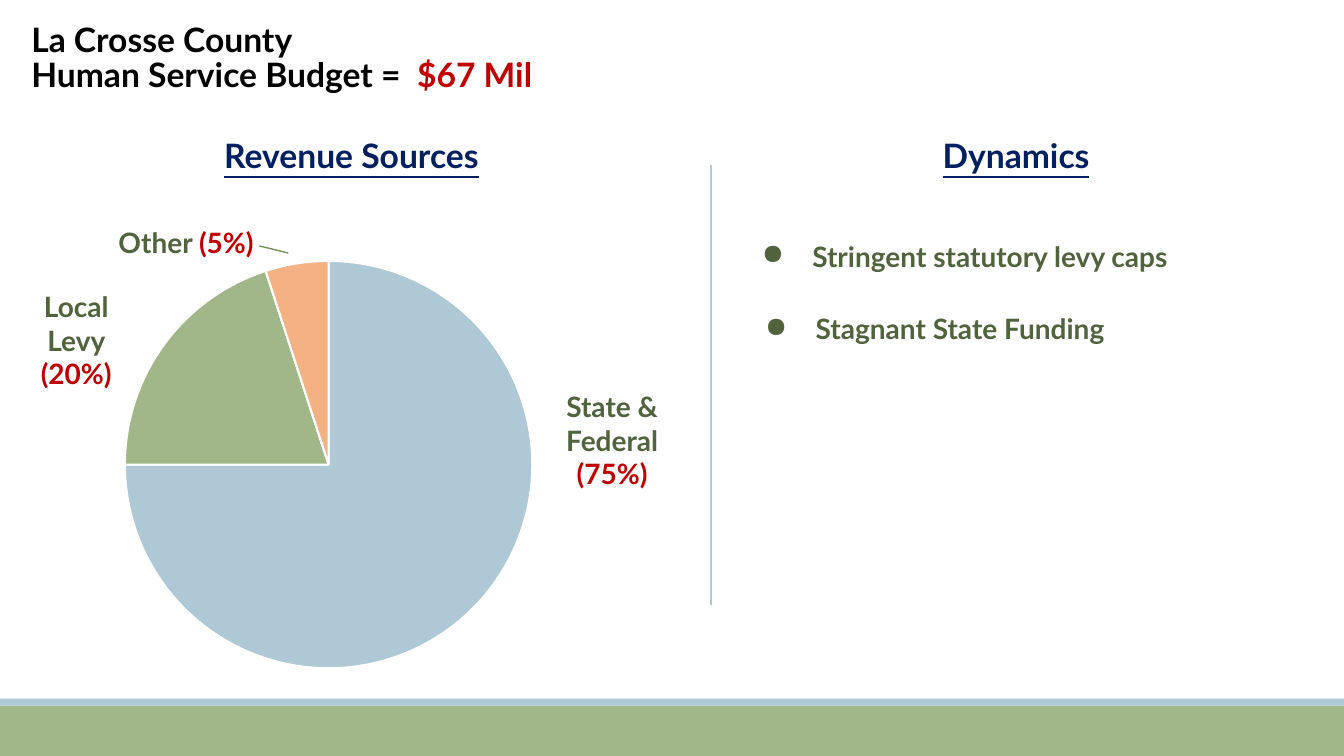
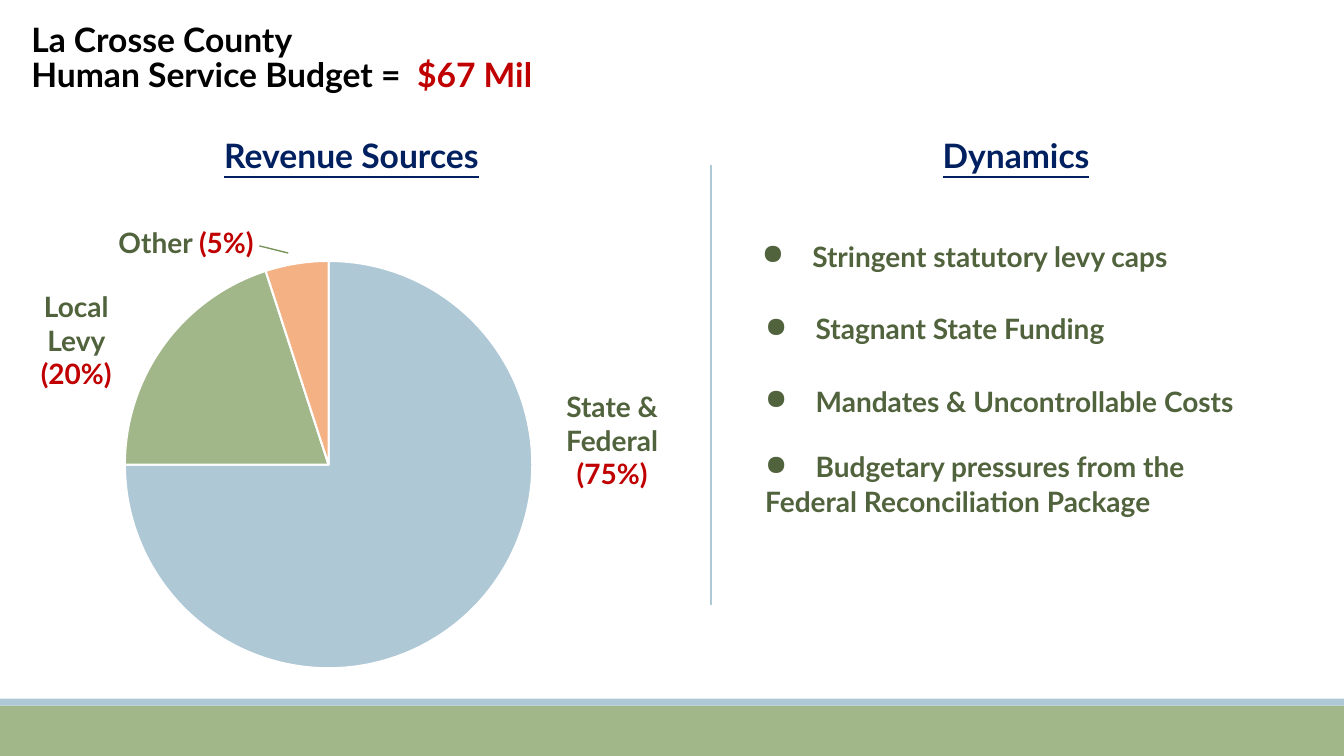
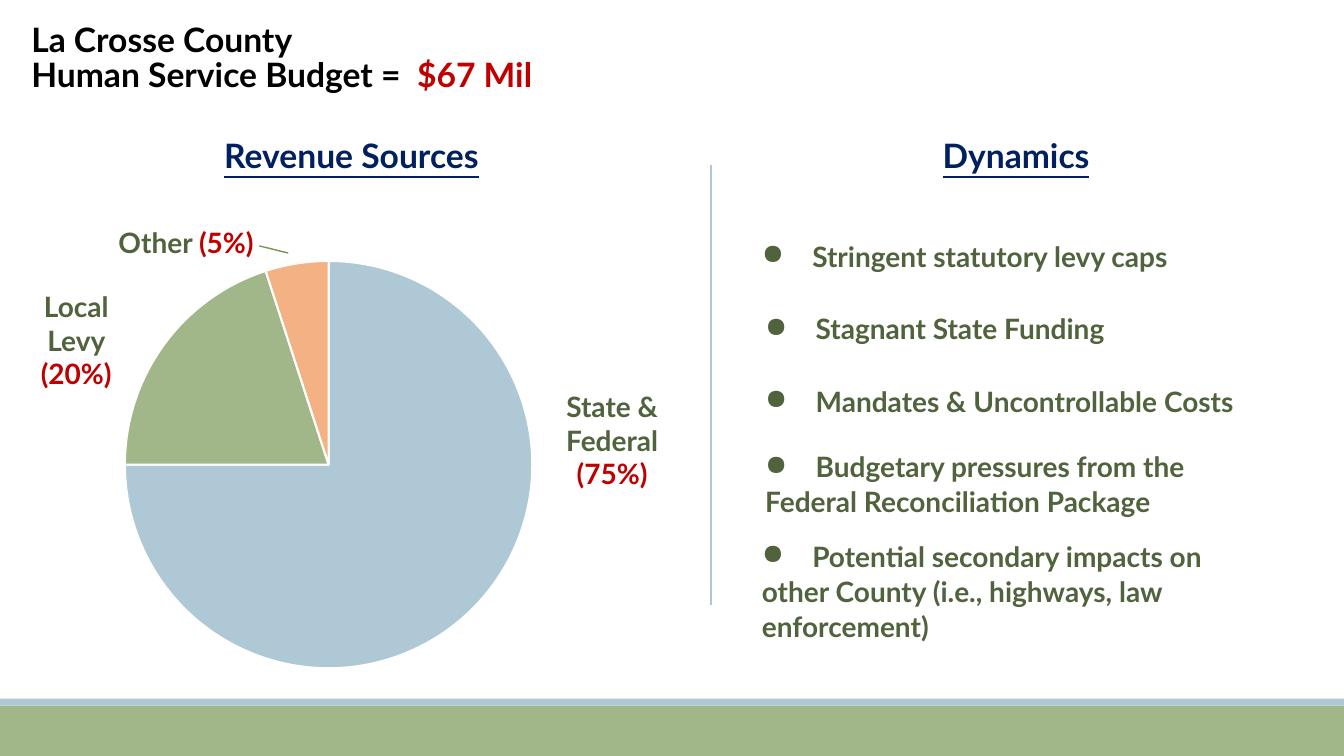
from dataclasses import dataclass

from lxml import etree
from pptx import Presentation
from pptx.chart.data import CategoryChartData
from pptx.dml.color import RGBColor
from pptx.enum.chart import XL_CHART_TYPE as ChartType
from pptx.enum.shapes import MSO_CONNECTOR as Connector, MSO_SHAPE as Preset
from pptx.enum.text import MSO_ANCHOR as Anchor, MSO_AUTO_SIZE as AutoSize, PP_ALIGN as Align
from pptx.oxml.ns import qn
from pptx.util import Inches, Pt


@dataclass(frozen=True)
class Theme:
    font: str = "Lato"
    black: str = "000000"
    white: str = "FFFFFF"
    red: str = "C00000"
    navy: str = "002060"
    olive: str = "51633D"
    green: str = "A1B78A"
    blue: str = "AEC8D5"
    orange: str = "F4B183"
    leader: str = "79955C"
    heading_size: int = 24
    body_size: int = 20
    chart_size: int = 10
    line_spacing: int = 20
    loose_spacing: int = 25


THEME = Theme()
WIDTH, HEIGHT = Inches(13.33), Inches(7.5)

# Grid of 100 columns by 100 rows; every position below is in these units
BANDS = [(93.33, 6.67, THEME.green), (92.4, 0.93, THEME.blue)]
LABEL_WIDTH, LABEL_HEIGHT = 8.5, 11.6
SLICES = [("1", 75, THEME.blue), ("2", 20, THEME.green), ("3", 5, THEME.orange)]
HEADINGS = [("Revenue Sources", 6.75), ("Dynamics", 56.2)]

# Slice labels: left, top, width, then lines made of (text, colour) pieces
LABELS = [
    (41.3, 51.6, LABEL_WIDTH,
     [[("State &", THEME.olive)], [("Federal", THEME.olive)], [("(75%)", THEME.red)]]),
    (1.43, 38.4, LABEL_WIDTH,
     [[("Local", THEME.olive)], [("Levy", THEME.olive)], [("(20%)", THEME.red)]]),
    (3.4, 29.87, 20.9, [[("Other ", THEME.olive), ("(5%)", THEME.red)]]),
]

# Dynamics: text, left, top, line spacing
DYNAMICS = [
    ("Stringent statutory levy caps", 55.95, 31.7, THEME.line_spacing),
    ("Stagnant State Funding", 56.2, 41.3, THEME.line_spacing),
    ("Mandates & Uncontrollable Costs", 56.2, 50, THEME.loose_spacing),
    ("Budgetary pressures from the Federal Reconciliation Package",
     56.2, 58.67, THEME.loose_spacing),
    ("Potential secondary impacts on other County (i.e., highways, law enforcement)",
     55.95, 70.5, THEME.loose_spacing),
]
DYNAMICS_PER_SLIDE = (2, 4, 5)


def columns(count):
    return int(WIDTH * count / 100)


def rows(count):
    return int(HEIGHT * count / 100)


def grid_box(left, top, width, height):
    return columns(left), rows(top), columns(width), rows(height)


def color(value):
    return RGBColor.from_string(value)


def add_tab_stop(paragraph, position, bullet=None):
    """Set a tab stop, after a bullet sign if one is given."""
    properties = paragraph._p.get_or_add_pPr()
    if bullet:
        properties.set("marL", "0")
        properties.set("indent", "0")
        etree.SubElement(properties, qn("a:buChar"), char=bullet)
    stops = etree.SubElement(properties, qn("a:tabLst"))
    etree.SubElement(stops, qn("a:tab"), pos=str(columns(position)), algn="l")


def write_lines(text_frame, lines, size, align, spacing=THEME.line_spacing, underline=None):
    """Fill a text frame with lines, each a list of (text, colour) pieces."""
    text_frame.word_wrap = True
    text_frame.auto_size = AutoSize.NONE
    text_frame.vertical_anchor = Anchor.TOP
    for index, pieces in enumerate(lines):
        paragraph = text_frame.add_paragraph() if index else text_frame.paragraphs[0]
        paragraph.alignment = align
        paragraph.line_spacing = Pt(spacing)
        paragraph.space_before = Pt(size / 5 if index else 0)
        for text, text_color in pieces:
            run = paragraph.add_run()
            run.text = text
            run.font.name = THEME.font
            run.font.size = Pt(size)
            run.font.bold = True
            run.font.underline = underline
            run.font.color.rgb = color(text_color)


def add_text(slide, box, lines, size, align=Align.CENTER, **style):
    text_frame = slide.shapes.add_textbox(*grid_box(*box)).text_frame
    write_lines(text_frame, lines, size, align, **style)
    return text_frame


def add_line(slide, start, end, line_color):
    line = slide.shapes.add_connector(
        Connector.STRAIGHT, columns(start[0]), rows(start[1]), columns(end[0]), rows(end[1]))
    line.line.color.rgb = color(line_color)
    line.line.width = Pt(1)
    etree.SubElement(line.element.spPr, qn("a:effectLst"))


def add_bands(slide):
    """Draw the footer bands and hand them to the layout that all slides share."""
    for top, height, fill in BANDS:
        band = slide.shapes.add_shape(Preset.RECTANGLE, *grid_box(0, top, 100, height))
        band.shadow.inherit = False
        band.fill.solid()
        band.fill.fore_color.rgb = color(fill)
        band.line.fill.background()
        slide.slide_layout.shapes.element.append(band.element)


def add_title(slide):
    title = slide.shapes.title
    title.left, title.top, title.width, title.height = grid_box(1.58, 3.47, 42.2, 11.6)
    lines = [[("La Crosse County", THEME.black)],
             [("Human Service Budget =\t", THEME.black), ("$67 Mil", THEME.red)]]
    write_lines(title.text_frame, lines, THEME.heading_size, Align.LEFT)
    add_tab_stop(title.text_frame.paragraphs[1], 28.7)


def add_revenue_pie(slide):
    data = CategoryChartData()
    data.categories = [name for name, _, _ in SLICES]
    data.add_series("Series 1", [value for _, value, _ in SLICES])
    chart = slide.shapes.add_chart(
        ChartType.PIE, *grid_box(0, 32.53, 48.9, 57.87), data).chart
    chart.has_title = False
    chart.has_legend = False
    chart.font.name = THEME.font
    chart.font.size = Pt(THEME.chart_size)
    chart.font.color.rgb = color(THEME.black)
    plot = chart.plots[0]
    plot.vary_by_categories = True
    for index, (_, _, fill) in enumerate(SLICES):
        slice_format = plot.series[0].points[index].format
        slice_format.fill.solid()
        slice_format.fill.fore_color.rgb = color(fill)
        slice_format.line.color.rgb = color(THEME.white)
        slice_format.line.width = Pt(1.5)

    # Fixed plot area, so that the labels stay beside their slices
    plot_area = chart.element.find(".//" + qn("c:plotArea"))
    for layout in plot_area.findall(qn("c:layout")):
        plot_area.remove(layout)
    layout = etree.Element(qn("c:layout"))
    plot_area.insert(0, layout)
    manual = etree.SubElement(layout, qn("c:manualLayout"))
    settings = {"layoutTarget": "inner", "xMode": "edge", "yMode": "edge",
                "x": 0.19, "y": 0.03, "w": 0.62, "h": 0.94}
    for name, value in settings.items():
        etree.SubElement(manual, qn("c:" + name), val=str(value))


def add_dynamic(slide, text, left, top, spacing):
    text_frame = add_text(slide, (left, top, 36.8, 8), [[("\t" + text, THEME.olive)]],
                          THEME.body_size, Align.LEFT, spacing=spacing)
    add_tab_stop(text_frame.paragraphs[0], 3.75, bullet="●")


def add_budget_slide(slide, dynamics):
    # Title and headings
    add_title(slide)
    for text, left in HEADINGS:
        add_text(slide, (left, 18.8, 38.8, 11.6), [[(text, THEME.navy)]],
                 THEME.heading_size, underline=True)
    add_line(slide, (52.9, 80), (52.9, 21.87), THEME.blue)

    # Revenue sources
    add_revenue_pie(slide)
    for left, top, width, lines in LABELS:
        add_text(slide, (left, top, width, LABEL_HEIGHT), lines, THEME.body_size)
    add_line(slide, (21.45, 33.47), (19.3, 32.53), THEME.leader)

    # Dynamics
    for dynamic in dynamics:
        add_dynamic(slide, *dynamic)


def main():
    presentation = Presentation()
    presentation.slide_width, presentation.slide_height = WIDTH, HEIGHT
    title_only = presentation.slide_layouts[5]
    for number, count in enumerate(DYNAMICS_PER_SLIDE):
        slide = presentation.slides.add_slide(title_only)
        if number == 0:
            add_bands(slide)
        add_budget_slide(slide, DYNAMICS[:count])
    presentation.save("out.pptx")


if __name__ == "__main__":
    main()
